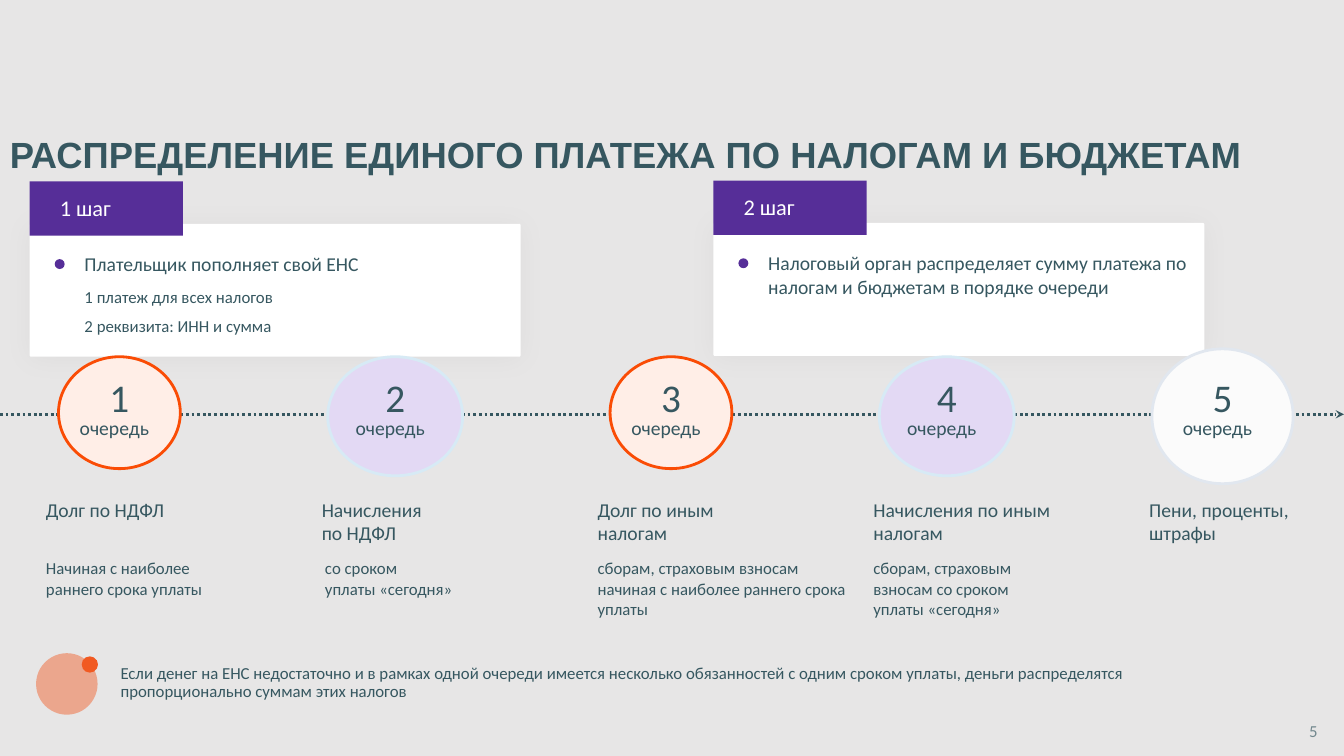
"""Build the slide on distributing the single tax payment by queue."""
from lxml.etree import SubElement
from pptx import Presentation
from pptx.dml.color import RGBColor
from pptx.enum.dml import MSO_LINE
from pptx.enum.shapes import MSO_CONNECTOR, MSO_SHAPE
from pptx.enum.text import MSO_ANCHOR, MSO_AUTO_SIZE as AutoSize
from pptx.oxml.ns import qn
from pptx.util import Cm, Pt

INK = RGBColor(0x36, 0x57, 0x60)
PAPER = RGBColor(0xE7, 0xE6, 0xE6)
WHITE = RGBColor(0xFF, 0xFF, 0xFF)
VIOLET = RGBColor(0x56, 0x2E, 0x98)
LILAC = RGBColor(0xE3, 0xD9, 0xF4)
ICE = RGBColor(0xD7, 0xEA, 0xF5)
PEACH = RGBColor(0xFF, 0xEE, 0xE7)
FLAME = RGBColor(0xFA, 0x4C, 0x05)
ORANGE = RGBColor(0xF1, 0x5A, 0x22)
SNOW = RGBColor(0xFB, 0xFB, 0xFB)
MIST = RGBColor(0xE1, 0xE7, 0xEF)

DEBT = (3.07, 2.82, 8.99, PEACH, FLAME)
CHARGE = (3.4, 3.0, 8.99, LILAC, ICE)
PENALTY = (3.56, 3.4, 8.79, SNOW, MIST)
FIRST_CENTER, FIRST_LABEL, QUEUE_STEP = 3.01, 0.91, 6.95

QUEUES = [
    (DEBT, "Долг по НДФЛ", 4.09,
     "Начиная с наиболее раннего срока уплаты", 5.21, 0),
    (CHARGE, "Начисления\vпо НДФЛ", 3.58,
     "со сроком\vуплаты «сегодня»", 4.5, 0.08),
    (DEBT, "Долг по иным\vналогам", 5.28,
     "сборам, страховым взносам начиная с наиболее раннего срока уплаты", 6.93, 0),
    (CHARGE, "Начисления по иным\vналогам", 5.66,
     "сборам, страховым взносам со сроком уплаты «сегодня»", 4.67, 0),
    (PENALTY, "Пени, проценты, штрафы", 4.65, "", 0, 0),
]


class QueueSlide:
    """Hold the text style and the slide, and draw its elements."""

    def __init__(self, slide, font="Calibri", ink=INK):
        self.slide, self.font, self.ink = slide, font, ink
        slide.background.fill.solid()
        slide.background.fill.fore_color.rgb = PAPER

    def text(self, words, left, top, width, height, size, color=None,
             font=None, bold=False, spacing=None, anchor=MSO_ANCHOR.TOP,
             fit=AutoSize.SHAPE_TO_FIT_TEXT):
        """Add a wrapped text box."""
        box = self.slide.shapes.add_textbox(Cm(left), Cm(top), Cm(width), Cm(height))
        frame = box.text_frame
        frame.word_wrap, frame.auto_size = True, fit
        frame.vertical_anchor = anchor
        paragraph = frame.paragraphs[0]
        paragraph.text = words
        paragraph.line_spacing = spacing
        for run in paragraph.runs:
            run.font.name, run.font.size = font or self.font, Pt(size)
            run.font.bold = bold
            run.font.color.rgb = color or self.ink
        return box

    def shape(self, kind, left, top, width, height, fill, outline=None):
        """Add a filled preset shape without a shadow."""
        figure = self.slide.shapes.add_shape(
            kind, Cm(left), Cm(top), Cm(width), Cm(height))
        figure.shadow.inherit = False
        figure.fill.solid()
        figure.fill.fore_color.rgb = fill
        if outline:
            figure.line.color.rgb, figure.line.width = outline, Pt(2)
        else:
            figure.line.fill.background()
        return figure

    def fade(self, element, percent):
        """Make every colour of an element partly transparent."""
        for color in element.element.iter(qn("a:srgbClr")):
            SubElement(color, qn("a:alpha"), val=str(percent * 1000))

    def timeline(self, top):
        """Add the dotted arrow across the slide."""
        arrow = self.slide.shapes.add_connector(
            MSO_CONNECTOR.STRAIGHT, 0, Cm(top), Cm(33.87), Cm(top))
        arrow.line.color.rgb, arrow.line.width = self.ink, Pt(2)
        arrow.line.dash_style = MSO_LINE.ROUND_DOT
        SubElement(arrow.line._get_or_add_ln(), qn("a:tailEnd"), type="stealth")
        SubElement(arrow.element.spPr, qn("a:effectLst"))

    def step(self, title, left, top, lines):
        """Add a card with a tab, a dot and lines of text."""
        card = self.shape(MSO_SHAPE.ROUNDED_RECTANGLE, left, top + 1.07, 12.37, 3.35, WHITE)
        card.adjustments[0] = 0.01
        shadow = SubElement(card.element.spPr.find(qn("a:effectLst")), qn("a:outerShdw"),
                            blurRad=str(Pt(20)), dist=str(Pt(1)), dir="5400000")
        shade = SubElement(shadow, qn("a:srgbClr"), val="000000")
        SubElement(shade, qn("a:alpha"), val="4000")
        self.shape(MSO_SHAPE.RECTANGLE, left, top, 3.86, 1.37, VIOLET)
        self.text(title, left + 0.51, top + 0.2, 2.03, 0.94, 16, WHITE)
        self.shape(MSO_SHAPE.OVAL, left + 0.63, top + 1.96, 0.25, 0.25, VIOLET)
        for words, offset, height, size in lines:
            self.text(words, left + 1.13, top + offset, 11.23, height, size)

    def queue(self, index, look, label, label_width, note, note_width, shift):
        """Add a numbered circle with its label and note."""
        width, height, top, fill, outline = look
        center = FIRST_CENTER + index * QUEUE_STEP
        left = FIRST_LABEL + index * QUEUE_STEP
        self.shape(MSO_SHAPE.OVAL, center - width / 2, top, width, height, fill, outline)
        self.text(str(index + 1), center - 0.5, 9.27, 1.12, 1.45, 28)
        self.text("очередь", center - 1.25, 10.35, 2.54, 0.86, 14)
        self.text(label, left, 12.42, label_width, 1.45, 14)
        if note:
            self.text(note, left + shift, 13.94, note_width, 1.8, 12)

    def footnote(self, words):
        """Add the closing remark with its two-circle marker."""
        self.text(words, 2.79, 16.64, 29.01, 1.17, 12, spacing=0.9)
        marker = self.shape(MSO_SHAPE.OVAL, 0.91, 16.46, 1.55, 1.55, ORANGE)
        self.fade(marker, 45)
        self.shape(MSO_SHAPE.OVAL, 2.06, 16.54, 0.41, 0.41, ORANGE)


def main():
    """Build and save the presentation."""
    deck = Presentation()
    deck.slide_width, deck.slide_height = Cm(33.87), Cm(19.05)
    page = QueueSlide(deck.slides.add_slide(deck.slide_layouts[6]))
    page.timeline(10.44)
    page.text("РАСПРЕДЕЛЕНИЕ ЕДИНОГО ПЛАТЕЖА ПО НАЛОГАМ И БЮДЖЕТАМ",
              0, 3.12, 33.53, 1.68, 26, font="Arial", bold=True, spacing=0.9,
              anchor=MSO_ANCHOR.MIDDLE, fit=AutoSize.NONE)
    page.step("1 шаг", 0.75, 4.57, [
        ("Плательщик пополняет свой ЕНС", 1.65, 0.86, 14),
        ("1 платеж для всех налогов", 2.54, 0.76, 12),
        ("2 реквизита: ИНН и сумма", 3.25, 0.76, 12)])
    page.step("2 шаг", 17.98, 4.55, [
        ("Налоговый орган распределяет сумму платежа по налогам "
         "и бюджетам в порядке очереди", 1.65, 1.45, 14)])
    for index, queue in enumerate(QUEUES):
        page.queue(index, *queue)
    page.footnote("Если денег на ЕНС недостаточно и в рамках одной очереди имеется "
                  "несколько обязанностей с одним сроком уплаты, деньги распределятся "
                  "пропорционально суммам этих налогов")
    page_number = page.text("5", 32.74, 18.03, 0.74, 0.76, 12)
    page.fade(page_number, 65)
    deck.save("out.pptx")


if __name__ == "__main__":
    main()
